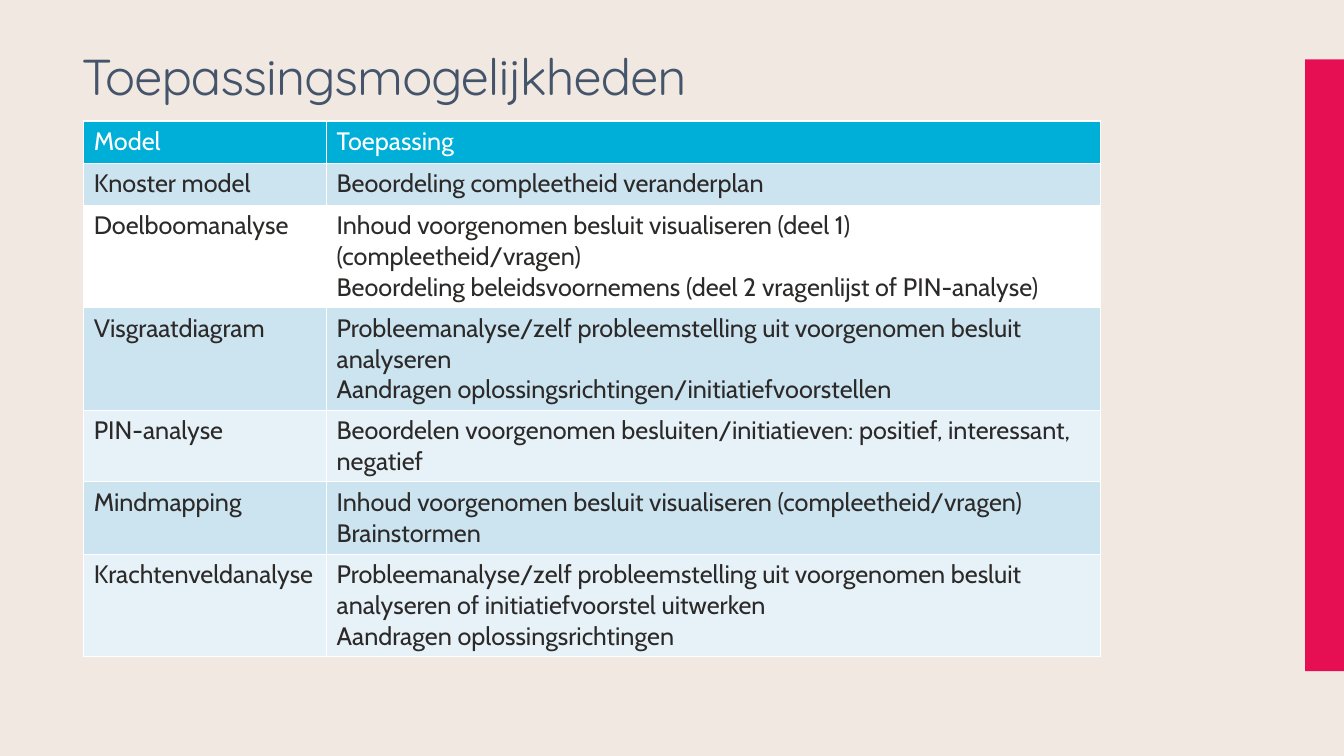
from lxml import etree
from pptx import Presentation
from pptx.dml.color import RGBColor
from pptx.enum.shapes import MSO_SHAPE
from pptx.enum.text import MSO_ANCHOR, MSO_AUTO_SIZE, PP_ALIGN
from pptx.oxml.ns import qn
from pptx.util import Pt

RECT = MSO_SHAPE.RECTANGLE
MIDDLE = MSO_ANCHOR.MIDDLE
NO_FIT = MSO_AUTO_SIZE.NONE
LEFT = PP_ALIGN.LEFT

# Content: model, then one entry per paragraph
TITLE = "Toepassingsmogelijkheden"
ROWS = [
    ("Model", ["Toepassing"]),
    ("Knoster model", ["Beoordeling compleetheid veranderplan"]),
    ("Doelboomanalyse", [
        "Inhoud voorgenomen besluit visualiseren (deel 1) (compleetheid/vragen)",
        "Beoordeling beleidsvoornemens (deel 2 vragenlijst of PIN-analyse)"]),
    ("Visgraatdiagram", [
        "Probleemanalyse/zelf probleemstelling uit voorgenomen besluit analyseren",
        "Aandragen oplossingsrichtingen/initiatiefvoorstellen"]),
    ("PIN-analyse", [
        "Beoordelen voorgenomen besluiten/initiatieven: positief, interessant, negatief"]),
    ("Mindmapping", [
        "Inhoud voorgenomen besluit visualiseren (compleetheid/vragen)",
        "Brainstormen"]),
    ("Krachtenveldanalyse", [
        "Probleemanalyse/zelf probleemstelling uit voorgenomen besluit analyseren "
        "of initiatiefvoorstel uitwerken",
        "Aandragen oplossingsrichtingen"]),
]

# Style
SAND = RGBColor(0xF0, 0xE8, 0xE1)
PINK = RGBColor(0xE6, 0x0F, 0x53)
SLATE = RGBColor(0x44, 0x54, 0x6A)
CYAN = RGBColor(0x00, 0xAF, 0xD7)
BLUE = RGBColor(0xCC, 0xE3, 0xF0)
PALE = RGBColor(0xE7, 0xF2, 0xF8)
WHITE = RGBColor(0xFF, 0xFF, 0xFF)
INK = RGBColor(0x2C, 0x2A, 0x29)
FILLS = [CYAN, BLUE, WHITE, BLUE, PALE, BLUE, PALE]
WIDTHS = [173.5, 553]
ROW_H, LINE_H = 30.2, 21.6


def set_font(para, name, size, color):
    font = para.font
    font.name, font.size, font.bold = name, Pt(size), False
    font.color.rgb = color


def add_edges(cell):
    props = cell._tc.get_or_add_tcPr()
    for i, side in enumerate(("lnL", "lnR", "lnT", "lnB")):
        line = etree.Element(qn("a:" + side), w=str(Pt(1)))
        fill = etree.SubElement(line, qn("a:solidFill"))
        etree.SubElement(fill, qn("a:srgbClr"), val=str(WHITE))
        props.insert(i, line)


def fill_cell(cell, lines, fill, color):
    cell.fill.solid()
    cell.fill.fore_color.rgb = fill
    add_edges(cell)
    cell.text_frame.text = "\n".join(lines)
    for para in cell.text_frame.paragraphs:
        set_font(para, "Cabin", 18, color)


# Slide and background
prs = Presentation()
prs.slide_width, prs.slide_height = Pt(960), Pt(540)
slide = prs.slides.add_slide(prs.slide_layouts[5])
slide.background.fill.solid()
slide.background.fill.fore_color.rgb = SAND

# Side bar
bar = slide.shapes.add_shape(RECT, Pt(932.2), Pt(42.5), Pt(27.8), Pt(437))
bar.shadow.inherit = False
bar.fill.solid()
bar.fill.fore_color.rgb = PINK
bar.line.fill.background()

# Title
title = slide.shapes.title
title.left, title.top = Pt(51.1), Pt(33.1)
title.width, title.height = Pt(859.7), Pt(46.8)
frame = title.text_frame
frame.text = TITLE
frame.auto_size = NO_FIT
frame.vertical_anchor = MIDDLE
head = frame.paragraphs[0]
head.alignment, head.line_spacing = LEFT, 0.9
set_font(head, "Quicksand", 36, SLATE)
head.runs[0].font._element.set("spc", "-60")

# Table: each extra paragraph adds one line to the row
heights = [ROW_H + LINE_H * (len(uses) - 1) for _, uses in ROWS]
table = slide.shapes.add_table(
    len(ROWS), len(WIDTHS), Pt(59.8), Pt(86.4),
    Pt(sum(WIDTHS)), Pt(sum(heights))).table
for col, width in zip(table.columns, WIDTHS):
    col.width = Pt(width)
for r, (model, uses) in enumerate(ROWS):
    table.rows[r].height = Pt(heights[r])
    color = INK if r else WHITE
    fill_cell(table.cell(r, 0), [model], FILLS[r], color)
    fill_cell(table.cell(r, 1), uses, FILLS[r], color)

prs.save("out.pptx")
